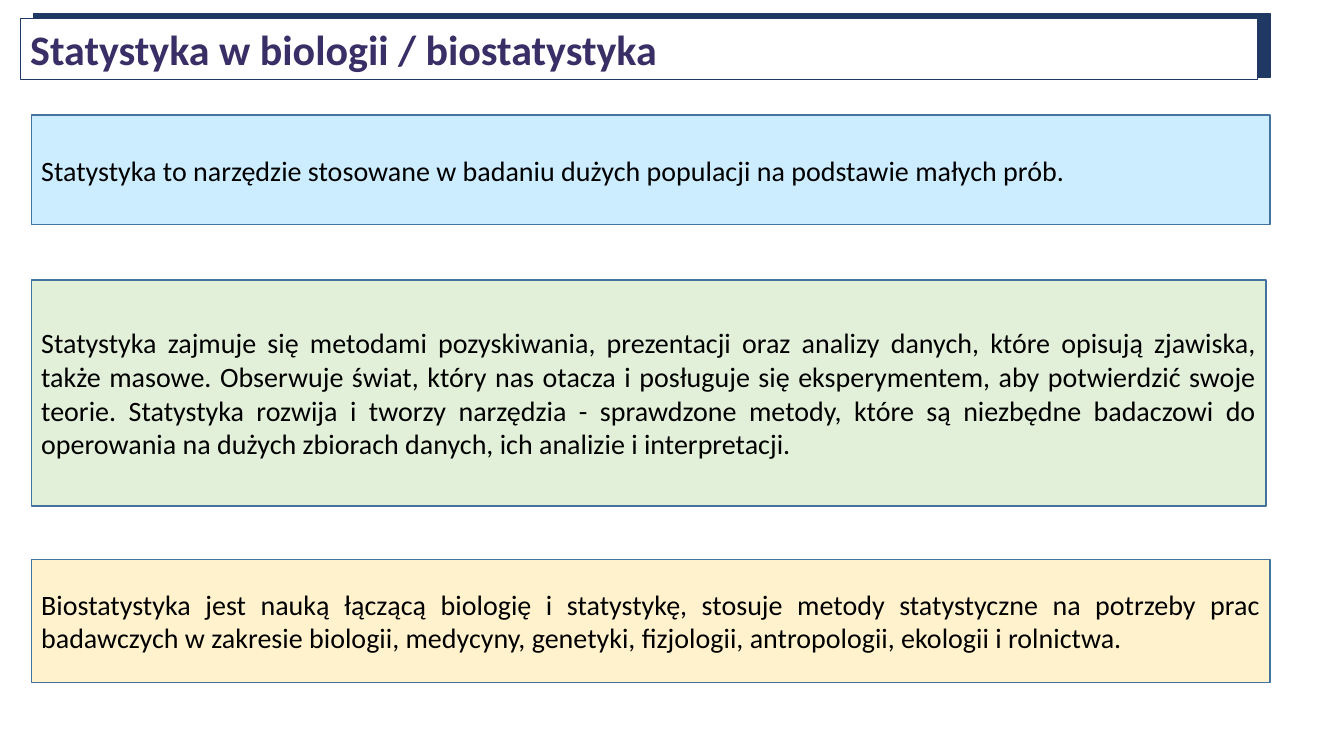
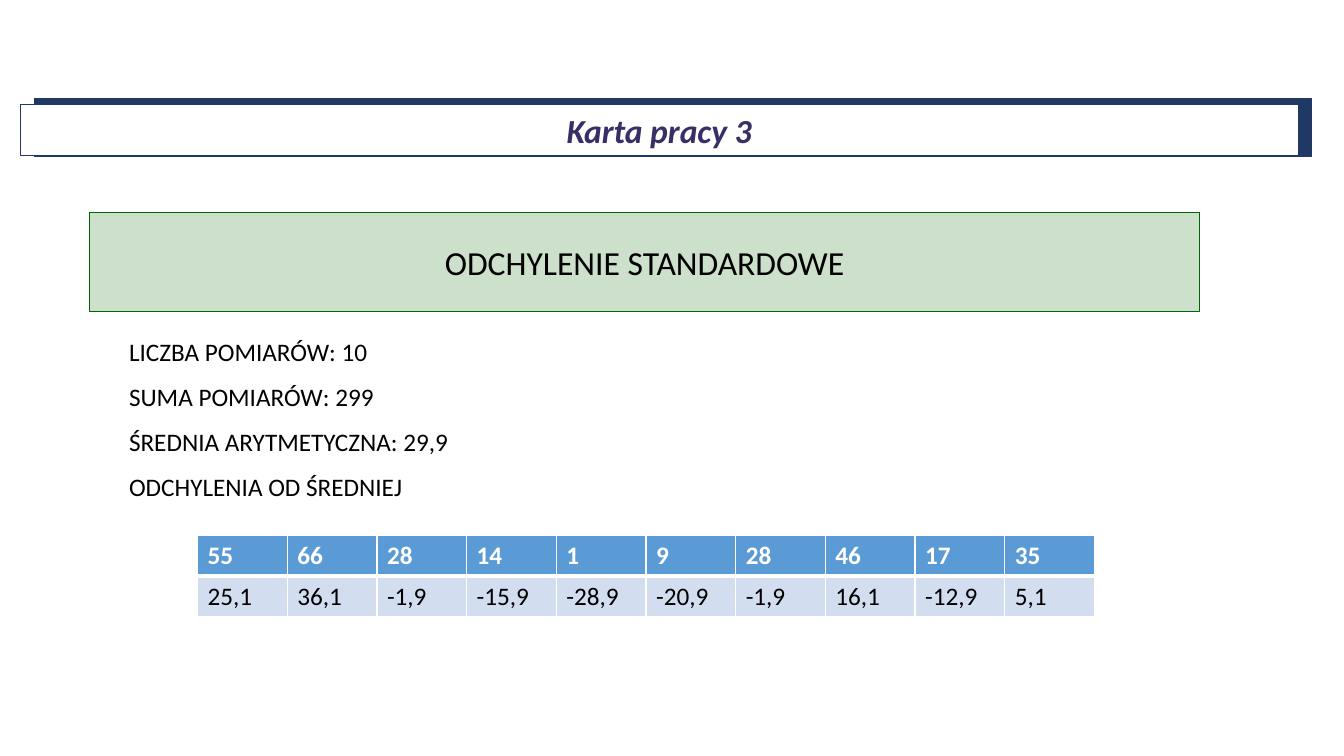
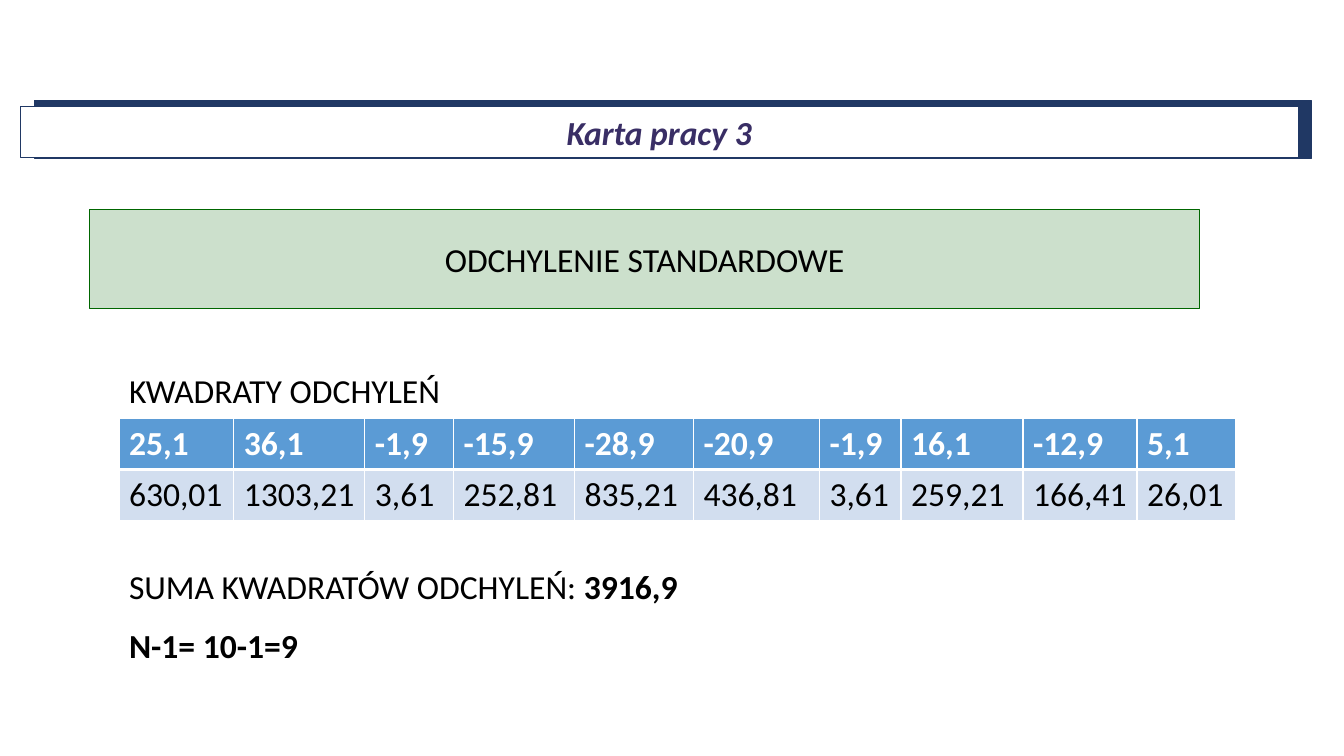
from lxml.etree import SubElement
from pptx import Presentation
from pptx.dml.color import RGBColor
from pptx.enum.shapes import MSO_SHAPE
from pptx.enum.text import MSO_ANCHOR, MSO_AUTO_SIZE, PP_ALIGN
from pptx.oxml.ns import qn
from pptx.util import Emu, Pt

PX = 9144  # EMU per px, 100 px to the inch
FONT = "Calibri"
NAVY = RGBColor(0x20, 0x38, 0x64)
PLUM = RGBColor(0x39, 0x2E, 0x65)
EDGE = RGBColor(0x43, 0x73, 0x9E)
SKY = RGBColor(0xCC, 0xEC, 0xFF)
MINT = RGBColor(0xE2, 0xF0, 0xD9)
CREAM = RGBColor(0xFF, 0xF2, 0xCC)
GREEN = RGBColor(0x00, 0x66, 0x00)
BLUE = RGBColor(0x5B, 0x9B, 0xD5)
PALE = RGBColor(0xD2, 0xDE, 0xEF)
BLACK = RGBColor(0, 0, 0)
WHITE = RGBColor(0xFF, 0xFF, 0xFF)


class Deck:
    def __init__(self):
        self.file = Presentation()
        self.file.slide_width = Emu(12192000)
        self.file.slide_height = Emu(6858000)
        self.slide = None

    def new(self, layout):
        self.slide = self.file.slides.add_slide(self.file.slide_layouts[layout])

    def place(self, shape, left, top, width, height):
        shape.left, shape.top = Emu(left * PX), Emu(top * PX)
        shape.width, shape.height = Emu(width * PX), Emu(height * PX)

    def paint(self, shape, fill, line, weight):
        shape.fill.solid()
        shape.fill.fore_color.rgb = fill
        shape.line.color.rgb = line
        shape.line.width = Pt(weight)

    def frame(self, shape, anchor=MSO_ANCHOR.MIDDLE):
        text = shape.text_frame
        text.word_wrap = True
        text.auto_size = MSO_AUTO_SIZE.NONE
        text.vertical_anchor = anchor
        text.margin_left = text.margin_right = Emu(10 * PX)
        text.margin_top = text.margin_bottom = Emu(5 * PX)
        return text

    def words(self, par, text, size, color=BLACK, bold=False, italic=False):
        run = par.add_run()
        run.text = text
        font = run.font
        font.name, font.size = FONT, Pt(size)
        font.bold, font.italic = bold, italic
        font.color.rgb = color

    def rect(self, area, fill, line, weight=1):
        shape = self.slide.shapes.add_shape(
            MSO_SHAPE.RECTANGLE, *(Emu(n * PX) for n in area))
        shape.shadow.inherit = False
        self.paint(shape, fill, line, weight)
        return shape

    def title(self, text, area, back, size, align, italic=False):
        """White title box in front of a navy band."""
        title = self.slide.shapes.title
        band = self.rect(back, NAVY, NAVY, 0.75)
        title._element.addprevious(band._element)
        self.place(title, *area)
        self.paint(title, WHITE, NAVY, 0.75)
        par = self.frame(title).paragraphs[0]
        par.alignment = align
        self.words(par, text, size, PLUM, True, italic)

    def box(self, text, area, fill):
        par = self.frame(self.rect(area, fill, EDGE)).paragraphs[0]
        par.alignment = PP_ALIGN.JUSTIFY
        self.words(par, text, 20)

    def topic(self, text, top):
        """Heading on a see-through green panel."""
        panel = self.rect((89, top, 1101, 98), GREEN, GREEN)
        tint = panel._element.spPr.find(qn("a:solidFill"))[0]
        SubElement(tint, qn("a:alpha"), val="20000")
        par = self.frame(panel).paragraphs[0]
        par.alignment = PP_ALIGN.CENTER
        self.words(par, text, 24)

    def body(self, lines, top, height, size):
        """Plain lines, each given as (space before, runs of (text, bold))."""
        shape = self.slide.placeholders[1]
        self.place(shape, 118, top, 974, height)
        text = self.frame(shape, MSO_ANCHOR.TOP)
        for i, (gap, runs) in enumerate(lines):
            par = text.add_paragraph() if i else text.paragraphs[0]
            props = par._p.get_or_add_pPr()
            props.set("marL", "0")
            props.set("indent", "0")
            SubElement(props, qn("a:buNone"))
            par.line_spacing = 1.0
            par.space_before = Pt(gap)
            for part, bold in runs:
                self.words(par, part, size, bold=bold)

    def border(self, cell, side, weight):
        line = SubElement(cell._tc.get_or_add_tcPr(), qn("a:" + side),
                          w=str(Pt(weight)))
        fill = SubElement(line, qn("a:solidFill"))
        SubElement(fill, qn("a:srgbClr"), val=str(WHITE))

    def table(self, rows, left, top, widths, height, size):
        grid = self.slide.shapes.add_table(
            len(rows), len(widths), Emu(left * PX), Emu(top * PX),
            Emu(sum(widths) * PX), Emu(height * len(rows) * PX)).table
        for col, width in zip(grid.columns, widths):
            col.width = Emu(width * PX)
        for r, row in enumerate(rows):
            head = r == 0
            thick = {"lnB" if head else "lnT": 3}
            for c, text in enumerate(row):
                cell = grid.cell(r, c)
                for side in ("lnL", "lnR", "lnT", "lnB"):
                    self.border(cell, side, thick.get(side, 1))
                cell.fill.solid()
                cell.fill.fore_color.rgb = BLUE if head else PALE
                self.words(cell.text_frame.paragraphs[0], text, size,
                           WHITE if head else BLACK, head)

    def card(self, top, panel):
        """Worksheet slide: centred title and topic panel."""
        self.new(1)
        self.title("Karta pracy 3", (20, top + 6, 1268, 50),
                   (34, top, 1267, 57), 24, PP_ALIGN.CENTER, True)
        self.topic("ODCHYLENIE STANDARDOWE", panel)


def main():
    deck = Deck()

    # Slide 1: what statistics is
    deck.new(5)
    deck.title("Statystyka w biologii / biostatystyka", (20, 18, 1228, 61),
               (33, 13, 1227, 64), 30, PP_ALIGN.LEFT)
    deck.box("Statystyka to narzędzie stosowane w badaniu dużych populacji "
             "na podstawie małych prób.", (31, 114, 1229, 109), SKY)
    deck.box("Biostatystyka jest nauką łączącą biologię i statystykę, stosuje "
             "metody statystyczne na potrzeby prac badawczych w zakresie "
             "biologii, medycyny, genetyki, fizjologii, antropologii, "
             "ekologii i rolnictwa.", (31, 555, 1229, 122), CREAM)
    deck.box("Statystyka zajmuje się metodami pozyskiwania, prezentacji oraz "
             "analizy danych, które opisują zjawiska, także masowe. Obserwuje "
             "świat, który nas otacza i posługuje się eksperymentem, aby "
             "potwierdzić swoje teorie. Statystyka rozwija i tworzy narzędzia "
             "- sprawdzone metody, które są niezbędne badaczowi do operowania "
             "na dużych zbiorach danych, ich analizie i interpretacji.",
             (31, 278, 1225, 224), MINT)

    # Slide 2: deviations from the mean
    values = ["55", "66", "28", "14", "1", "9", "28", "46", "17", "35"]
    diffs = ["25,1", "36,1", "-1,9", "-15,9", "-28,9", "-20,9", "-1,9",
             "16,1", "-12,9", "5,1"]
    facts = ["LICZBA POMIARÓW: 10", "SUMA POMIARÓW: 299",
             "ŚREDNIA ARYTMETYCZNA: 29,9", "ODCHYLENIA OD ŚREDNIEJ"]
    deck.card(98, 211)
    deck.body([(10.5 if i else 0, [(fact, False)])
               for i, fact in enumerate(facts)], 329, 190, 18)
    deck.table([values, diffs], 196, 531, [89] * 10, 40, 18)

    # Slide 3: squared deviations
    squares = ["630,01", "1303,21", "3,61", "252,81", "835,21", "436,81",
               "3,61", "259,21", "166,41", "26,01"]
    deck.card(100, 208)
    deck.body([(0, [("KWADRATY ODCHYLEŃ", False)]),
               (111, [("SUMA KWADRATÓW ODCHYLEŃ: ", False), ("3916,9", True)]),
               (13.5, [("N-1= 10-1=9", True)])], 362, 326, 24)
    deck.table([diffs, squares], 118, 415,
               [114, 130, 88, 120, 118, 125, 81, 121, 113, 98], 50, 24)

    deck.file.save("out.pptx")


if __name__ == "__main__":
    main()
